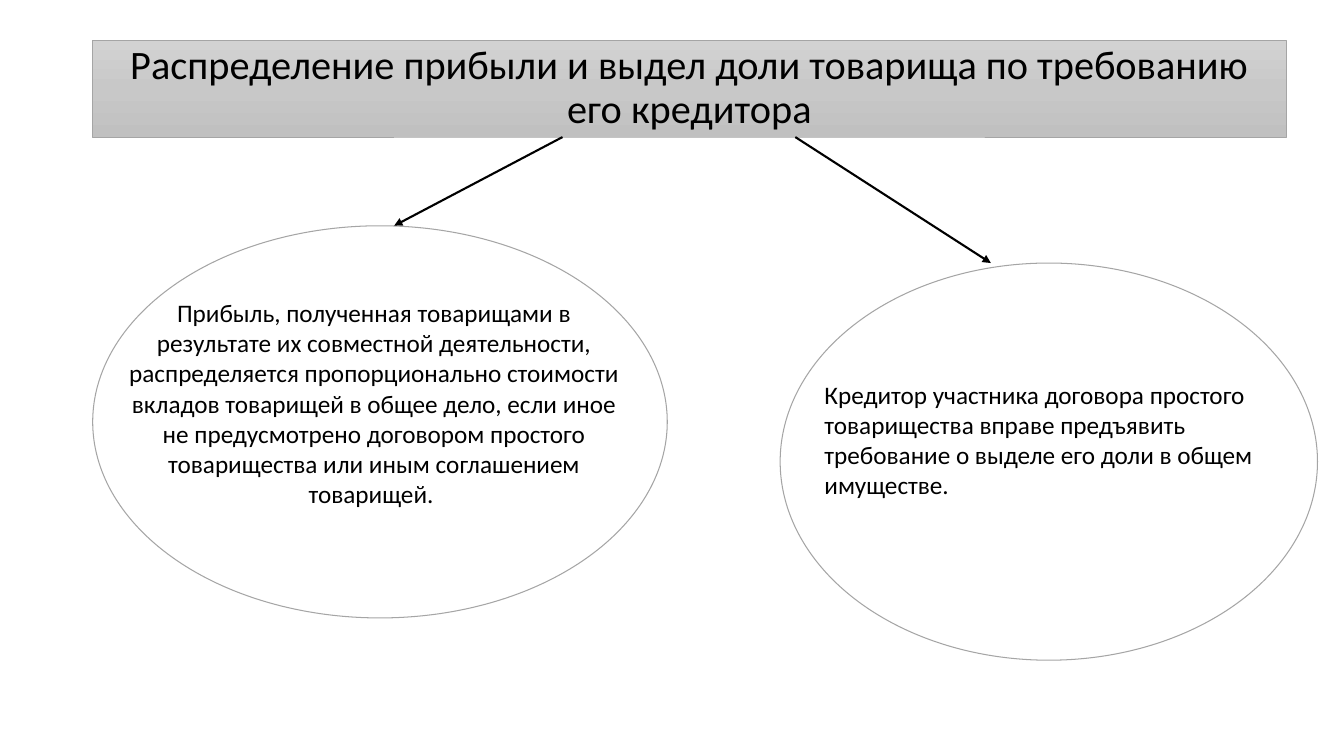
from copy import deepcopy

from lxml import etree
from pptx import Presentation
from pptx.dml.color import RGBColor
from pptx.enum.shapes import MSO_CONNECTOR, MSO_SHAPE
from pptx.enum.text import MSO_ANCHOR, MSO_AUTO_SIZE, PP_ALIGN
from pptx.oxml.ns import qn
from pptx.util import Pt

RECT, OVAL = MSO_SHAPE.RECTANGLE, MSO_SHAPE.OVAL
STRAIGHT = MSO_CONNECTOR.STRAIGHT
LEFT, CENTER = PP_ALIGN.LEFT, PP_ALIGN.CENTER
MIDDLE = MSO_ANCHOR.MIDDLE
GROW = MSO_AUTO_SIZE.SHAPE_TO_FIT_TEXT

BLACK = RGBColor(0x00, 0x00, 0x00)
GRAY = RGBColor(0xA5, 0xA5, 0xA5)
GRADIENT = [RGBColor(0xD2, 0xD2, 0xD2), RGBColor(0xC8, 0xC8, 0xC8),
            RGBColor(0xC0, 0xC0, 0xC0)]

# Content: boxes are left, top, width, height in points
TITLE = "Распределение прибыли и выдел доли товарища по требованию его кредитора"
TITLE_BOX = (66.24, 28.8, 852.5, 69.12)
BRANCHES = [
    {"text": "Прибыль, полученная товарищами в результате их совместной "
             "деятельности, распределяется пропорционально стоимости вкладов "
             "товарищей в общее дело, если иное не предусмотрено договором "
             "простого товарищества или иным соглашением товарищей. ",
     "align": CENTER, "oval": (66.24, 161.3, 410.4, 280.1),
     "text_box": (78.5, 208.8, 377.3, 159.8), "arrow_x": (401.8, 281.5)},
    {"text": "Кредитор участника договора простого товарищества вправе "
             "предъявить требование о выделе его доли в общем имуществе.",
     "align": LEFT, "oval": (557.3, 187.9, 383.8, 283.7),
     "text_box": (581.8, 267.1, 322.6, 94.3), "arrow_x": (568.1, 707.8)},
]


def pts(values):
    return [Pt(v) for v in values]


def write(sp, text, size, **paragraph_format):
    tf = sp.text_frame
    tf.word_wrap = True
    p = tf.paragraphs[0]
    for name, value in paragraph_format.items():
        setattr(p, name, value)
    r = p.add_run()
    r.text = text
    for name, value in {"name": "Calibri", "size": Pt(size)}.items():
        setattr(r.font, name, value)
    r.font.color.rgb = BLACK
    return tf


def add_outlined(shape_type, box, line_width):
    sp = slide.shapes.add_shape(shape_type, *pts(box))
    sp.shadow.inherit = False
    sp.line.color.rgb = GRAY
    sp.line.width = Pt(line_width)
    return sp


def add_arrow(x1, y1, x2, y2):
    line = slide.shapes.add_connector(STRAIGHT, *pts((x1, y1, x2, y2)))
    line.line.color.rgb = BLACK
    line.line.width = Pt(1.5)
    etree.SubElement(line.line._get_or_add_ln(), qn("a:tailEnd"), type="triangle")
    etree.SubElement(line._element.spPr, qn("a:effectLst"))


def fill_gradient(sp, colors):
    sp.fill.gradient()
    sp.fill.gradient_angle = 270
    stops = sp._element.spPr.find(".//" + qn("a:gsLst"))
    stops.insert(1, deepcopy(stops[0]))
    for i, (stop, color) in enumerate(zip(sp.fill.gradient_stops, colors)):
        stop.position = i / (len(colors) - 1)
        stop.color.rgb = color


prs = Presentation()
prs.slide_width, prs.slide_height = Pt(960), Pt(540)
slide = prs.slides.add_slide(prs.slide_layouts[6])

# Title bar
title = add_outlined(RECT, TITLE_BOX, 0.5)
fill_gradient(title, GRADIENT)
tf = write(title, TITLE, 28.8, alignment=CENTER, line_spacing=0.9)
tf.vertical_anchor = MIDDLE

# Arrows from the title bar down to the ovals
title_bottom = TITLE_BOX[1] + TITLE_BOX[3]
for branch in BRANCHES:
    start_x, end_x = branch["arrow_x"]
    add_arrow(start_x, title_bottom, end_x, branch["oval"][1])
    add_outlined(OVAL, branch["oval"], 0.75).fill.background()

# Texts over the ovals
for branch in BRANCHES:
    sp = slide.shapes.add_textbox(*pts(branch["text_box"]))
    tf = write(sp, branch["text"], 18, alignment=branch["align"])
    tf.auto_size = GROW

prs.save("out.pptx")
